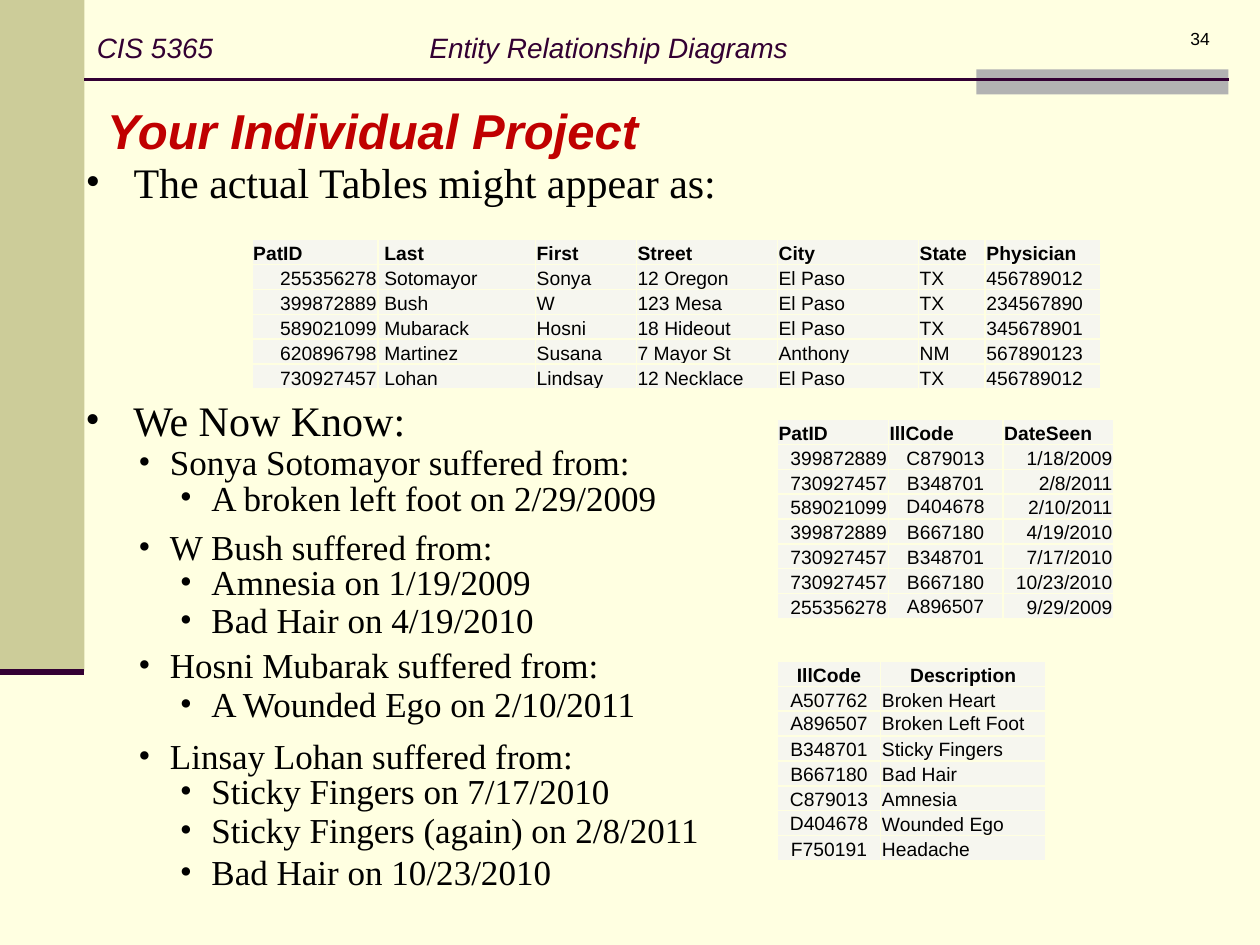
import pptx
import pptx.util
import pptx.dml.color
import pptx.enum.shapes
import pptx.enum.text
import pptx.oxml.ns
import lxml.etree

Inches = pptx.util.Inches
Pt = pptx.util.Pt
RGB = pptx.dml.color.RGBColor.from_string
qn = pptx.oxml.ns.qn
ALIGN = pptx.enum.text.PP_ALIGN
ANCHOR = pptx.enum.text.MSO_ANCHOR
SUB = lxml.etree.SubElement

COLORS = {
    "page": "FFFFE1", "sidebar": "CCCC99", "bar": "B2B2B2", "rule": "330033",
    "title": "C00000", "text": "000000", "cell": "F6F6EF",
}


def write(frame, text, size, font="Arial", color="text", bold=False, italic=False,
          align=ALIGN.LEFT, anchor=ANCHOR.TOP):
    frame.word_wrap = True
    frame.vertical_anchor = anchor
    para = frame.paragraphs[0]
    para.alignment = align
    span = para.add_run()
    span.text = text
    span.font.size = Pt(size)
    span.font.name = font
    span.font.bold = bold
    span.font.italic = italic
    span.font.color.rgb = RGB(COLORS[color])
    return para


def write_bullet(frame, text, size, indent):
    para = write(frame, text, size, "Times New Roman")
    frame.auto_size = pptx.enum.text.MSO_AUTO_SIZE.SHAPE_TO_FIT_TEXT
    para.line_spacing = 0.85
    para.space_before = Pt(0)
    props = para._p.get_or_add_pPr()
    props.set("marL", str(Inches(indent)))
    props.set("indent", str(-Inches(indent)))
    SUB(props, qn("a:buFont")).set("typeface", "Times New Roman")
    SUB(props, qn("a:buChar")).set("char", "•")


deck = pptx.Presentation()
deck.slide_width, deck.slide_height = Inches(10), Inches(7.5)
page = deck.slides.add_slide(deck.slide_layouts[1])
page.background.fill.solid()
page.background.fill.fore_color.rgb = RGB(COLORS["page"])

for name, area in [("sidebar", (0, 0, 0.67, 5.33)), ("bar", (7.75, 0.55, 2, 0.2))]:
    block = page.shapes.add_shape(pptx.enum.shapes.MSO_SHAPE.RECTANGLE, *map(Inches, area))
    block.shadow.inherit = False
    block.fill.solid()
    block.fill.fore_color.rgb = RGB(COLORS[name])
    block.line.fill.background()

for left, right, top, weight in [(0.67, 9.75, 0.63, 1.5), (0, 0.67, 5.33, 3.5)]:
    rule = page.shapes.add_connector(
        pptx.enum.shapes.MSO_CONNECTOR.STRAIGHT,
        Inches(left), Inches(top), Inches(right), Inches(top))
    rule.line.color.rgb = RGB(COLORS["rule"])
    rule.line.width = Pt(weight)
    SUB(rule._element.spPr, qn("a:effectLst"))

title = page.shapes.title
title.left, title.top, title.width, title.height = map(Inches, (0.75, 0.75, 5.25, 0.57))
write(title.text_frame, "Your Individual Project", 28, color="title", bold=True, italic=True)

number = page.shapes.add_textbox(*map(Inches, (7.62, 0.17, 2.08, 0.5)))
write(number.text_frame, "34", 10, align=ALIGN.RIGHT)

header = page.shapes.add_textbox(*map(Inches, (0.67, -0.25, 9.17, 1.25)))
para = write(header.text_frame, "CIS 5365\tEntity Relationship Diagrams", 16,
             color="rule", italic=True, anchor=ANCHOR.MIDDLE)
tab = SUB(SUB(para._p.get_or_add_pPr(), qn("a:tabLst")), qn("a:tab"))
tab.set("pos", str(Inches(2.64)))
tab.set("algn", "l")

body = page.placeholders[1]
body.left, body.top, body.width, body.height = map(Inches, (0.58, 1.25, 9.33, 0.44))
write_bullet(body.text_frame, "The actual Tables might appear as:", 24, 0.38)

LEVELS = [
    {"left": 0.58, "width": 4.42, "height": 0.44, "size": 24, "indent": 0.38},
    {"left": 1, "width": 4.42, "height": 0.39, "size": 20, "indent": 0.25},
    {"left": 1.33, "width": 4.58, "height": 0.39, "size": 20, "indent": 0.25},
]
FINDINGS = [
    (0, 3.14, "We Now Know:"),
    (1, 3.5, "Sonya Sotomayor suffered from:"),
    (2, 3.78, "A broken left foot on 2/29/2009"),
    (1, 4.17, "W Bush suffered from:"),
    (2, 4.45, "Amnesia on 1/19/2009"),
    (2, 4.75, "Bad Hair on 4/19/2010"),
    (1, 5.11, "Hosni Mubarak suffered from:"),
    (2, 5.42, "A Wounded Ego on 2/10/2011"),
    (1, 5.83, "Linsay Lohan suffered from:"),
    (2, 6.11, "Sticky Fingers on 7/17/2010"),
    (2, 6.42, "Sticky Fingers (again) on 2/8/2011"),
    (2, 6.75, "Bad Hair on 10/23/2010"),
]
for depth, top, text in FINDINGS:
    level = LEVELS[depth]
    box = page.shapes.add_textbox(Inches(level["left"]), Inches(top),
                                  Inches(level["width"]), Inches(level["height"]))
    write_bullet(box.text_frame, text, level["size"], level["indent"])

TABLES = [
    {"at": (2, 1.9), "height": 1.19, "columns": [1, 1.25, 0.8, 1.12, 1.12, 0.53, 0.92],
     "head": "lllllll", "align": "rllllll", "padded": 1, "rows": [
        ("PatID", "Last", "First", "Street", "City", "State", "Physician"),
        ("255356278", "Sotomayor", "Sonya", "12 Oregon", "El Paso", "TX", "456789012"),
        ("399872889", "Bush", "W", "123 Mesa", "El Paso", "TX", "234567890"),
        ("589021099", "Mubarack", "Hosni", "18 Hideout", "El Paso", "TX", "345678901"),
        ("620896798", "Martinez", "Susana", "7 Mayor St", "Anthony", "NM", "567890123"),
        ("730927457", "Lohan", "Lindsay", "12 Necklace", "El Paso", "TX", "456789012")]},
    {"at": (6.17, 3.33), "height": 1.58, "columns": [0.88, 0.91, 0.88],
     "head": "lll", "align": "rcr", "padded": None, "rows": [
        ("PatID", "IllCode", "DateSeen"),
        ("399872889", "C879013", "1/18/2009"),
        ("730927457", "B348701", "2/8/2011"),
        ("589021099", "D404678", "2/10/2011"),
        ("399872889", "B667180", "4/19/2010"),
        ("730927457", "B348701", "7/17/2010"),
        ("730927457", "B667180", "10/23/2010"),
        ("255356278", "A896507", "9/29/2009")]},
    {"at": (6.17, 5.25), "height": 1.58, "columns": [0.82, 1.31],
     "head": "cc", "align": "cl", "padded": None, "rows": [
        ("IllCode", "Description"),
        ("A507762", "Broken Heart"),
        ("A896507", "Broken Left Foot"),
        ("B348701", "Sticky Fingers"),
        ("B667180", "Bad Hair"),
        ("C879013", "Amnesia"),
        ("D404678", "Wounded Ego"),
        ("F750191", "Headache")]},
]
ALIGNMENTS = {"l": ALIGN.LEFT, "c": ALIGN.CENTER, "r": ALIGN.RIGHT}
CENTRED_CELLS = {"D404678", "A896507", "Broken Left Foot"}

for data in TABLES:
    frame = page.shapes.add_table(
        len(data["rows"]), len(data["columns"]), *map(Inches, data["at"]),
        Inches(sum(data["columns"])), Inches(data["height"]))
    table = frame.table
    table.horz_banding = False
    for column, width in zip(table.columns, data["columns"]):
        column.width = Inches(width)
    for r, values in enumerate(data["rows"]):
        aligns = data["align"] if r else data["head"]
        for c, value in enumerate(values):
            cell = table.cell(r, c)
            cell.margin_left = Inches(0.05 if c == data["padded"] else 0.01)
            cell.margin_right = cell.margin_top = Inches(0.01)
            cell.margin_bottom = 0
            write(cell.text_frame, value, 11, bold=r == 0, align=ALIGNMENTS[aligns[c]])
            cell.vertical_anchor = ANCHOR.MIDDLE if value in CENTRED_CELLS else ANCHOR.BOTTOM
            props = cell._tc.get_or_add_tcPr()
            for side in ("a:lnL", "a:lnR", "a:lnT", "a:lnB"):
                edge = SUB(props, qn(side))
                edge.set("w", str(Pt(1)))
                SUB(SUB(edge, qn("a:solidFill")), qn("a:srgbClr")).set("val", COLORS["page"])
            cell.fill.solid()
            cell.fill.fore_color.rgb = RGB(COLORS["cell"])

deck.save("out.pptx")
